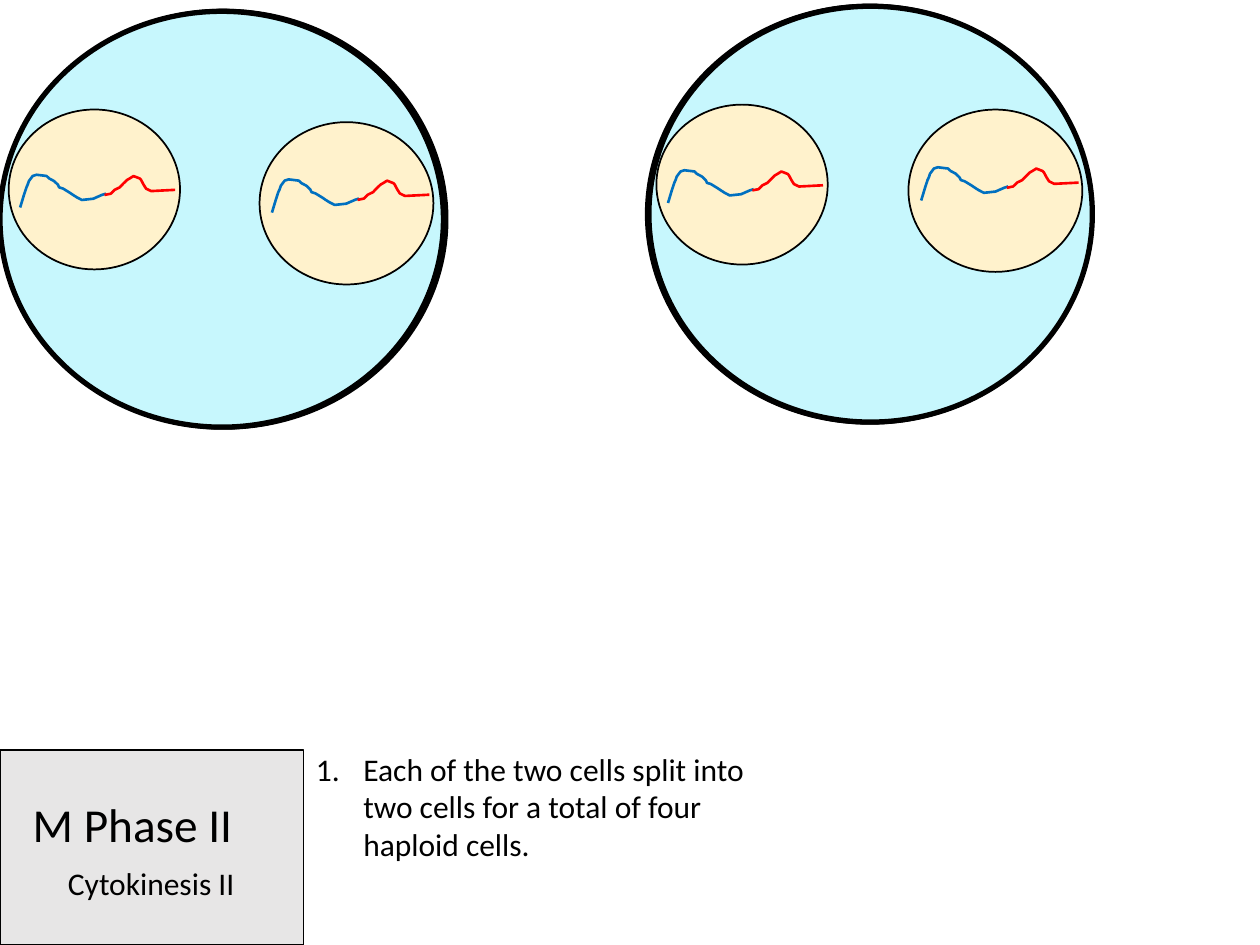
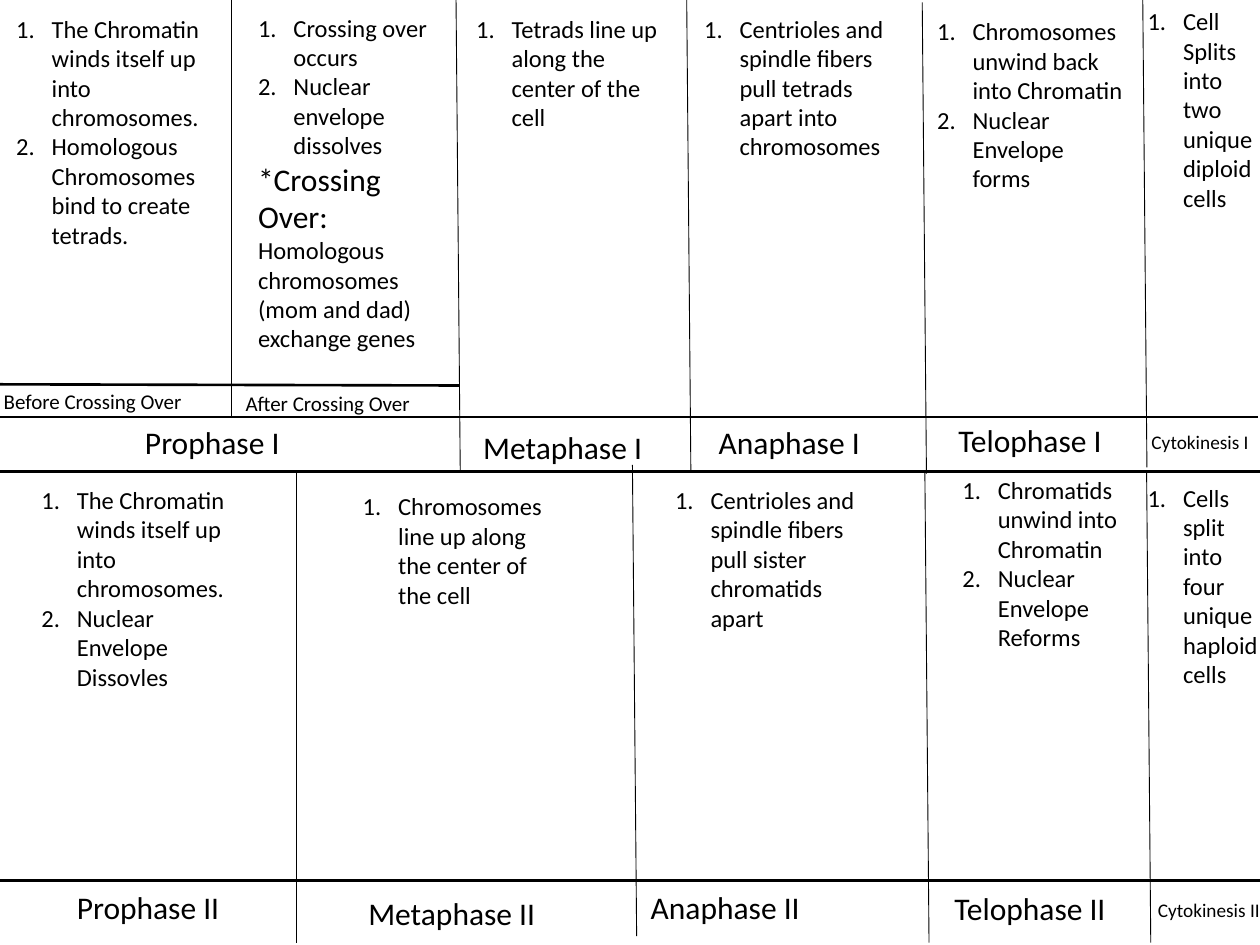
from dataclasses import dataclass

import pptx
import pptx.dml.color
import pptx.enum.shapes
import pptx.enum.text
import pptx.util
from lxml import etree

Pt = pptx.util.Pt
Shape = pptx.enum.shapes.MSO_SHAPE
Align = pptx.enum.text.PP_ALIGN


@dataclass(frozen=True)
class Theme:
    font: str = "Calibri"
    ink: str = "000000"
    cell: str = "C7F7FD"
    nucleus: str = "FFF2CC"
    panel: str = "E7E6E6"
    blue: str = "0070C0"
    red: str = "FF0000"
    title: int = 27
    body: int = 18
    note: int = 14
    caption: int = 12
    small: int = 11


THEME = Theme()

PHASE_TITLE = "M Phase II"
PHASE_SUBTITLE = "Cytokinesis II"
PHASE_NOTE = "Each of the two cells split into two cells for a total of four haploid cells."

CELL_SIZE = (253.4, 237.6)
CELLS = [(1.4, 6.5), (370, 3.6), (0, 6.5), (370.8, 3.6)]
NUCLEUS_SIZE = (97.9, 91.4)
NUCLEI = [
    {"at": (5, 62.6), "scale": 1, "strand": (11.5, 118.6)},
    {"at": (148.3, 69.8), "scale": 1.015, "strand": (155.4, 121.5)},
    {"at": (375.1, 59.8), "scale": 1, "strand": (381.7, 116)},
    {"at": (519.1, 62.6), "scale": 1.015, "strand": (526.4, 114.6)},
]
STRANDS = [
    (THEME.blue, [
        (0, 0), (2.2, -7.2), (3.6, -11.5), (4.3, -13), (5, -15.1), (7.2, -18),
        (9.4, -18.7), (15.1, -18), (16.6, -16.6), (19.4, -15.1), (21.6, -13),
        (22.3, -11.5), (24.5, -10.8), (28.1, -8.6), (30.2, -7.2), (32.4, -5.8),
        (35.3, -4.3), (41.8, -5), (46.8, -7.2), (49, -7.9)]),
    (THEME.red, [
        (48.2, -7.2), (51.8, -7.9), (54, -10.1), (56.9, -11.5), (59, -13.7),
        (61.2, -15.8), (62.6, -16.6), (64.8, -18), (68.4, -16.6), (69.1, -15.8),
        (70.6, -13), (72, -10.8), (74.9, -9.4), (88.6, -10.1)]),
]

RULES = [
    (0, 269.3, 720, 269.3),
    (-1.4, 238.3, 718.6, 238.3),
    (-1.4, 219.6, 262.8, 220.3),
    (0, 503.3, 720, 503.3),
]
ROW_HEIGHT = 269.3
LEAN = 2.4
LEANING_DIVIDERS = [
    (260.6, 0), (392.4, 0), (527, 1.4), (653, -2.2),
    (361.4, 265.7), (528.5, 269.3), (655.2, 269.3),
]
STRAIGHT_DIVIDERS = [(132.5, 0, 238.3), (169.2, 269.3, 538.6)]

LABEL_WIDTH = 234
PHASES = [
    ("Prophase I", 4.3, 238.3, THEME.body),
    ("Metaphase I", 204.5, 241.2, THEME.body),
    ("Anaphase I", 334, 238.3, THEME.body),
    ("Telophase I", 471.6, 236.9, THEME.body),
    ("Cytokinesis I", 568.8, 242.6, THEME.small),
    ("Prophase II", -32.4, 504, THEME.body),
    ("Metaphase II", 141.1, 507.6, THEME.body),
    ("Anaphase II", 297.4, 504, THEME.body),
    ("Telophase II", 471.6, 504.7, THEME.body),
    ("Cytokinesis II", 573.8, 509.8, THEME.small),
]
CAPTIONS = [
    ("Before Crossing Over", -5, 218.2),
    ("After Crossing Over", 133.2, 219.6),
]
NOTES = [
    (2.2, 4.3, 122.4, 165, ["The Chromatin winds itself up into chromosomes.",
                            "Homologous Chromosomes bind to create tetrads."]),
    (140.4, 3.6, 120.2, 204, ["Crossing over occurs", "Nuclear envelope dissolves"]),
    (265, 4.3, 120.2, 75, ["Tetrads line up along the center of the cell"]),
    (395.3, 4.3, 120.2, 92, ["Centrioles and spindle fibers pull tetrads apart into chromosomes"]),
    (528.5, 5.8, 120.2, 126, ["Chromosomes unwind back into Chromatin", "Nuclear Envelope forms"]),
    (648.7, 0, 79.2, 126, ["Cell Splits into two unique diploid cells"]),
    (16.6, 273.6, 122.4, 126, ["The Chromatin winds itself up into chromosomes.",
                               "Nuclear Envelope Dissovles"]),
    (200.2, 277.2, 120.2, 75, ["Chromosomes line up along the center of the cell"]),
    (378.7, 273.6, 120.2, 92, ["Centrioles and spindle fibers pull sister chromatids apart"]),
    (542.9, 267.8, 120.2, 109, ["Chromatids unwind into Chromatin", "Nuclear Envelope Reforms"]),
    (648.7, 272.2, 79.2, 126, ["Cells split into four unique haploid cells"]),
]
CROSSING_OVER = [
    ("*Crossing Over: ", THEME.body),
    ("Homologous chromosomes (mom and dad) exchange genes", THEME.note),
]


def color(value):
    return pptx.dml.color.RGBColor.from_string(value)


def format_span(span, size):
    span.font.name = THEME.font
    span.font.size = Pt(size)
    span.font.color.rgb = color(THEME.ink)


def add_text(page, left, top, width, height, lines, size, align=Align.LEFT, indent=0):
    box = page.shapes.add_textbox(Pt(left), Pt(top), Pt(width), Pt(height))
    frame = box.text_frame
    frame.word_wrap = True
    frame.text = "\n".join(lines)
    for para in frame.paragraphs:
        para.alignment = align
        for span in para.runs:
            format_span(span, size)
        if indent:
            number(para, indent)
    return box


def number(para, indent):
    properties = para._p.get_or_add_pPr()
    properties.set("marL", str(Pt(indent)))
    properties.set("indent", str(-Pt(indent)))
    bullet = etree.SubElement(properties, pptx.oxml.ns.qn("a:buAutoNum"))
    bullet.set("type", "arabicPeriod")


def add_block(page, preset, left, top, width, height, fill, weight):
    block = page.shapes.add_shape(preset, Pt(left), Pt(top), Pt(width), Pt(height))
    block.shadow.inherit = False
    block.fill.solid()
    block.fill.fore_color.rgb = color(fill)
    block.line.color.rgb = color(THEME.ink)
    block.line.width = Pt(weight)


def add_line(page, ends, weight):
    line = page.shapes.add_connector(
        pptx.enum.shapes.MSO_CONNECTOR.STRAIGHT, *[Pt(value) for value in ends])
    line.line.color.rgb = color(THEME.ink)
    line.line.width = Pt(weight)
    etree.SubElement(line._element.spPr, pptx.oxml.ns.qn("a:effectLst"))


def add_strand(page, start, scale, points, stroke):
    placed = [(Pt(start[0] + x * scale), Pt(start[1] + y * scale)) for x, y in points]
    builder = page.shapes.build_freeform(*placed[0], scale=1)
    builder.add_line_segments(placed[1:], close=False)
    strand = builder.convert_to_shape()
    strand.shadow.inherit = False
    strand.fill.background()
    strand.line.color.rgb = color(stroke)
    strand.line.width = Pt(1.5)


def place_title(page):
    title = page.shapes.title
    title.left, title.top, title.width, title.height = [
        Pt(value) for value in (11.5, 450.7, 152.6, 40.3)]
    frame = title.text_frame
    frame.text = PHASE_TITLE
    frame.auto_size = pptx.enum.text.MSO_AUTO_SIZE.NONE
    frame.vertical_anchor = pptx.enum.text.MSO_ANCHOR.TOP
    frame.paragraphs[0].alignment = Align.LEFT
    format_span(frame.paragraphs[0].runs[0], THEME.title)
    page.shapes._spTree.append(title._element)


def build_cytokinesis(deck):
    page = deck.slides.add_slide(deck.slide_layouts[5])
    for left, top in CELLS:
        add_block(page, Shape.OVAL, left, top, *CELL_SIZE, THEME.cell, 3)
    for nucleus in NUCLEI:
        scale = nucleus["scale"]
        size = [side * scale for side in NUCLEUS_SIZE]
        add_block(page, Shape.OVAL, *nucleus["at"], *size, THEME.nucleus, 1)
        for stroke, points in STRANDS:
            add_strand(page, nucleus["strand"], scale, points, stroke)
    add_text(page, 173.5, 424.8, 280.8, 105, [PHASE_NOTE], THEME.body, indent=27)
    add_block(page, Shape.RECTANGLE, 0, 428.4, 173.5, 111.6, THEME.panel, 1)
    place_title(page)
    add_text(page, 31.7, 490.3, 152.6, 29, [PHASE_SUBTITLE], THEME.body)


def build_summary(deck):
    page = deck.slides.add_slide(deck.slide_layouts[6])
    for ends in RULES:
        add_line(page, ends, 1.5)
    for x, top in LEANING_DIVIDERS:
        add_line(page, (x, top, x + LEAN, top + ROW_HEIGHT), 0.5)
    for x, top, bottom in STRAIGHT_DIVIDERS:
        add_line(page, (x, top, x, bottom), 0.5)
    for name, left, top, size in PHASES:
        add_text(page, left, top, LABEL_WIDTH, size * 1.2 + 7.2, [name], size, Align.CENTER)
    for caption, left, top in CAPTIONS:
        add_text(page, left, top, LABEL_WIDTH, 21.6, [caption], THEME.caption)
    boxes = [add_text(page, left, top, width, height, steps, THEME.note, indent=20.25)
             for left, top, width, height, steps in NOTES]
    definition = boxes[1].text_frame.add_paragraph()
    for words, size in CROSSING_OVER:
        span = definition.add_run()
        span.text = words
        format_span(span, size)


def main():
    deck = pptx.Presentation()
    deck.slide_width, deck.slide_height = Pt(720), Pt(540)
    build_cytokinesis(deck)
    build_summary(deck)
    deck.save("out.pptx")


if __name__ == "__main__":
    main()
